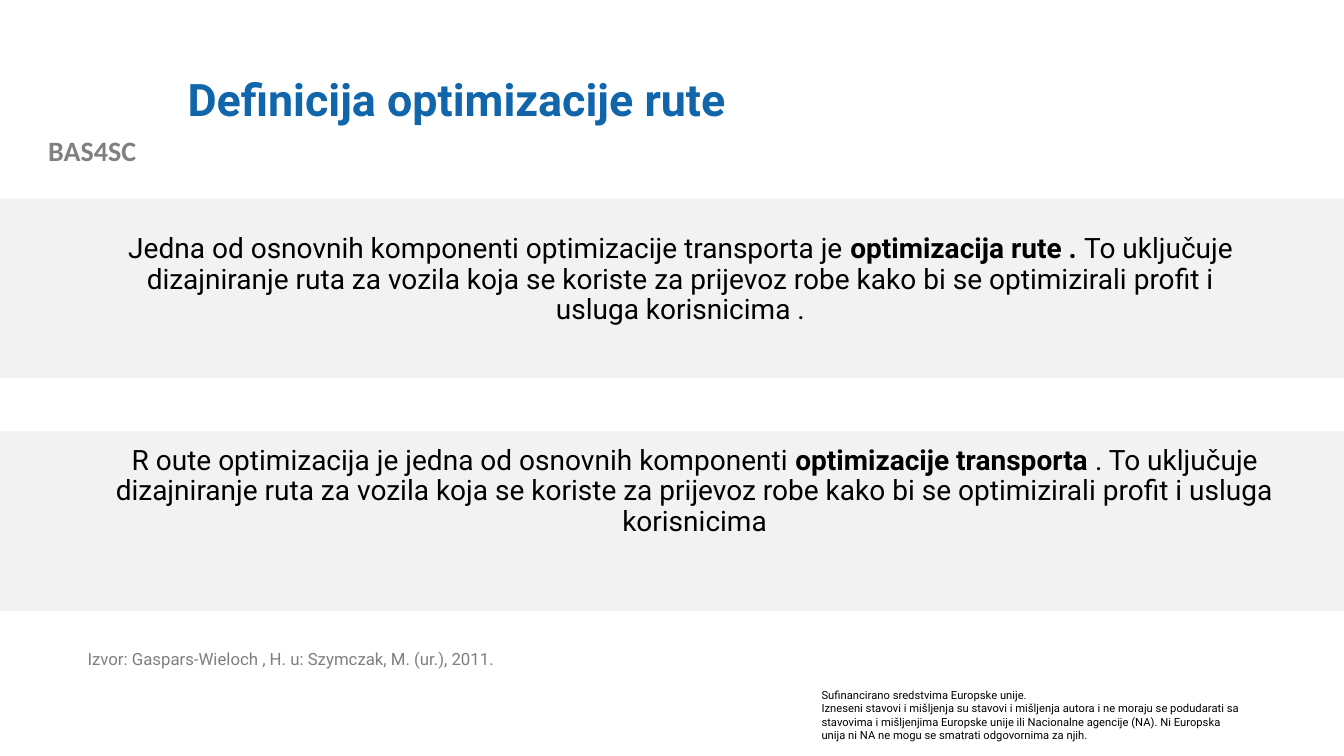
from dataclasses import dataclass

from pptx import Presentation
from pptx import util as u
from pptx.dml.color import RGBColor
from pptx.enum import shapes, text


@dataclass(frozen=True)
class Theme:
    font: str = "Roboto"
    label_font: str = "Calibri"
    blue: str = "1065AB"
    black: str = "000000"
    label_grey: str = "808080"
    source_grey: str = "7F7F7F"
    band_grey: str = "F2F2F2"
    title_size: int = 32
    body_size: int = 20
    source_size: int = 12
    notice_size: int = 8


theme = Theme()
WIDTH, HEIGHT = 13.33, 7.5
LEFT, CENTER = text.PP_ALIGN.LEFT, text.PP_ALIGN.CENTER

presentation = Presentation()
presentation.slide_width = u.Inches(WIDTH)
presentation.slide_height = u.Inches(HEIGHT)
slide = presentation.slides.add_slide(presentation.slide_layouts[5])


def write(frame, paragraphs, size, color, bold=False, align=LEFT,
          spacing=None, font=theme.font):
    """Fill a frame; in each paragraph, every second part split by | is bold."""
    frame.word_wrap = True
    for index, line in enumerate(paragraphs):
        paragraph = frame.paragraphs[0] if index == 0 else frame.add_paragraph()
        paragraph.alignment = align
        paragraph.line_spacing = spacing
        for part, words in enumerate(line.split("|")):
            run = paragraph.add_run()
            run.text = words
            run.font.name = font
            run.font.size = u.Pt(size)
            run.font.bold = bold or part % 2 == 1
            run.font.color.rgb = RGBColor.from_string(color)


def add_text(left, top, width, height, paragraphs, size, color, **style):
    box = slide.shapes.add_textbox(*map(u.Inches, (left, top, width, height)))
    write(box.text_frame, paragraphs, size, color, **style)


# Title
title = slide.shapes.title
title.left, title.top, title.width, title.height = map(
    u.Inches, (1.76, 0.4, 10.66, 1.22))
title.text_frame.vertical_anchor = text.MSO_ANCHOR.MIDDLE
write(title.text_frame, ["Definicija optimizacije rute"], theme.title_size,
      theme.blue, bold=True, spacing=0.9)

# Project label
add_text(0, 1.28, 1.83, 0.44, ["BAS4SC"], theme.body_size, theme.label_grey,
         bold=True, align=CENTER, font=theme.label_font)

# Full-width bands with a definition on each
BAND_TOP, BAND_HEIGHT, BAND_STEP = 1.97, 1.78, 2.31
definitions = [
    (1, 2.28, 11.5,
     "Jedna od osnovnih komponenti optimizacije transporta je "
     "|optimizacija rute . |To uključuje dizajniranje ruta za vozila koja se "
     "koriste za prijevoz robe kako bi se optimizirali profit i usluga "
     "korisnicima ."),
    (0.93, 4.38, 11.92,
     "R oute optimizacija je jedna od osnovnih komponenti "
     "|optimizacije transporta |. To uključuje dizajniranje ruta za vozila "
     "koja se koriste za prijevoz robe kako bi se optimizirali profit i "
     "usluga korisnicima"),
]
for row, (left, top, width, definition) in enumerate(definitions):
    band = slide.shapes.add_shape(
        shapes.MSO_SHAPE.RECTANGLE, 0, u.Inches(BAND_TOP + row * BAND_STEP),
        u.Inches(WIDTH), u.Inches(BAND_HEIGHT))
    band.shadow.inherit = False
    band.fill.solid()
    band.fill.fore_color.rgb = RGBColor.from_string(theme.band_grey)
    band.line.fill.background()
    add_text(left, top, width, 1.69, [definition], theme.body_size,
             theme.black, align=CENTER, spacing=0.9)

# Source
add_text(0.77, 6.41, 5.6, 0.52,
         ["Izvor: Gaspars-Wieloch , H. u: Szymczak, M. (ur.), 2011."],
         theme.source_size, theme.source_grey, spacing=0.9)

# Funding notice
add_text(8.05, 6.78, 4.37, 0.64, [
    "Sufinancirano sredstvima Europske unije.",
    "Izneseni stavovi i mišljenja su stavovi i mišljenja autora i ne moraju se "
    "podudarati sa stavovima i mišljenjima Europske unije ili Nacionalne "
    "agencije (NA). Ni Europska unija ni NA ne mogu se smatrati odgovornima "
    "za njih.",
], theme.notice_size, theme.black)

presentation.save("out.pptx")
